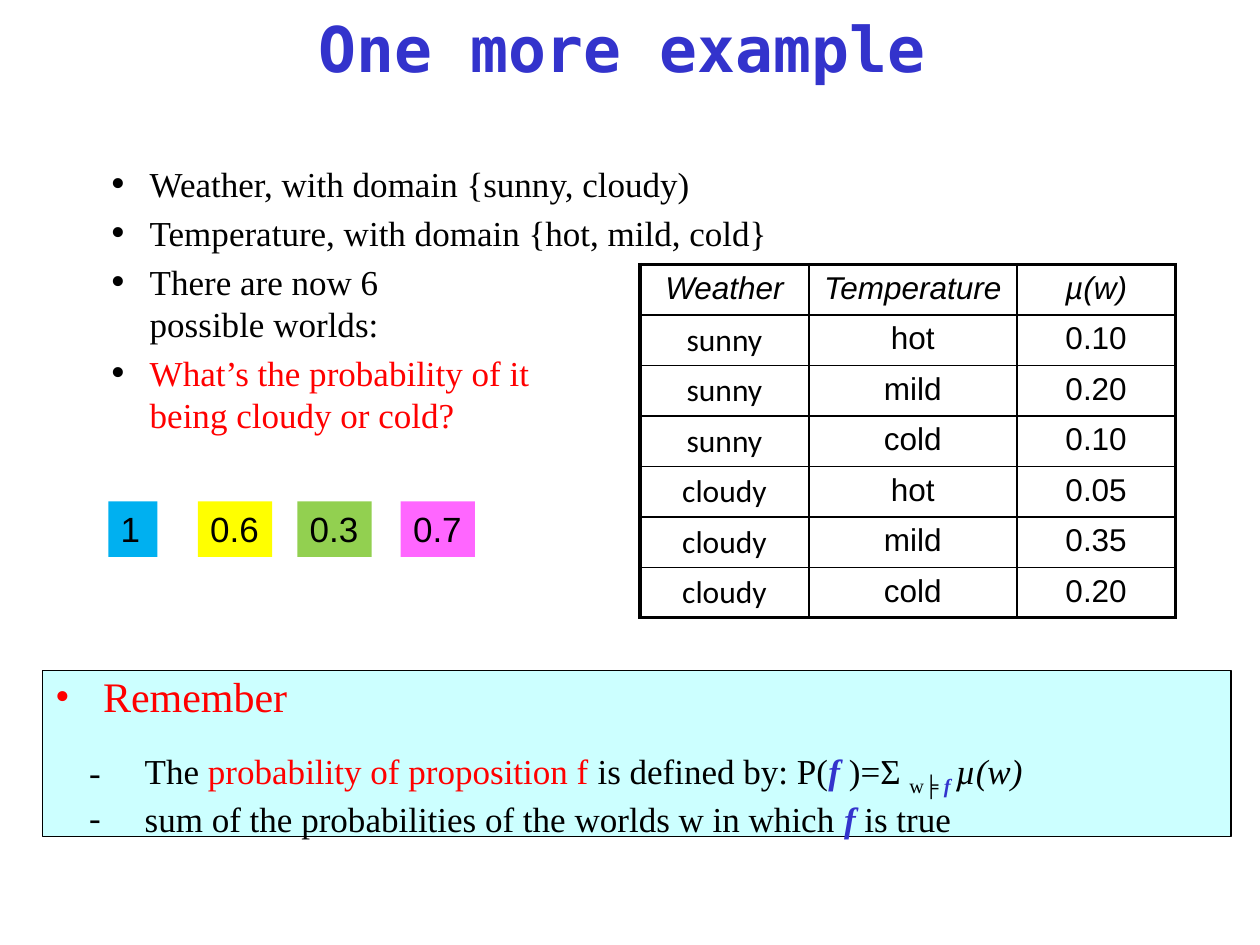
import pptx
import pptx.util
import pptx.dml.color
import pptx.enum.shapes
import pptx.enum.text
import pptx.oxml.ns
from lxml import etree

Inches, Pt = pptx.util.Inches, pptx.util.Pt
ALIGN, ANCHOR = pptx.enum.text.PP_ALIGN, pptx.enum.text.MSO_ANCHOR
qn = pptx.oxml.ns.qn

COLORS = {"black": "000000", "white": "FFFFFF", "red": "FF0000", "blue": "3333CC",
          "sky": "00B0F0", "yellow": "FFFF00", "green": "92D050", "pink": "FF66FF",
          "pale": "CCFFFF"}
SERIF = "Times New Roman"


def rgb(name):
    return pptx.dml.color.RGBColor.from_string(COLORS[name])


def add_text(p, text, font=SERIF, size=20, color="black", bold=False, italic=False,
             subscript=False):
    """Append formatted text to a paragraph; a newline becomes a line break."""
    for i, line in enumerate(text.split("\n")):
        if i:
            p.add_line_break()
        r = p.add_run()
        r.text = line
        r.font.name, r.font.size = font, Pt(size)
        r.font.bold, r.font.italic = bold, italic
        r.font.color.rgb = rgb(color)
        if subscript:
            r.font._element.set("baseline", "-25000")


def set_bullet(p, char, margin, hang, color, percent=100):
    pPr = p._p.get_or_add_pPr()
    pPr.set("marL", str(Inches(margin)))
    pPr.set("indent", str(-Inches(hang)))
    clr = etree.SubElement(pPr, qn("a:buClr"))
    etree.SubElement(clr, qn("a:srgbClr"), val=COLORS[color])
    etree.SubElement(pPr, qn("a:buSzPct"), val=str(percent * 1000))
    etree.SubElement(pPr, qn("a:buFont"), typeface=SERIF)
    etree.SubElement(pPr, qn("a:buChar"), char=char)


def add_title(s, x, y, w, h):
    sp = s.shapes.title
    sp.left, sp.top, sp.width, sp.height = map(Inches, (x, y, w, h))
    tf = sp.text_frame
    tf.vertical_anchor = ANCHOR.MIDDLE
    p = tf.paragraphs[0]
    p.alignment = ALIGN.CENTER
    add_text(p, "One more example", font="DejaVu Sans Mono", size=36, color="blue", bold=True)


def add_bullets(s, x, y, w, h):
    tf = s.shapes.add_textbox(*map(Inches, (x, y, w, h))).text_frame
    tf.word_wrap = True
    tf.margin_top = Inches(0.53)
    items = [("Weather, with domain {sunny, cloudy)", "black"),
             ("Temperature, with domain {hot, mild, cold}", "black"),
             ("There are now 6\npossible worlds:", "black"),
             ("What’s the probability of it\nbeing cloudy or cold?", "red")]
    for i, (text, color) in enumerate(items):
        p = tf.add_paragraph() if i else tf.paragraphs[0]
        p.space_before = Pt(4 if i else 0)
        set_bullet(p, "•", 0.81, 0.31, "black", 120)
        add_text(p, text, color=color)


def add_rect(s, x, y, w, h, fill, line=None):
    sp = s.shapes.add_shape(pptx.enum.shapes.MSO_SHAPE.RECTANGLE, *map(Inches, (x, y, w, h)))
    sp.shadow.inherit = False
    sp.fill.solid()
    sp.fill.fore_color.rgb = rgb(fill)
    if line:
        sp.line.color.rgb = rgb(line)
        sp.line.width = Pt(0.75)
    else:
        sp.line.fill.background()
    tf = sp.text_frame
    tf.vertical_anchor = ANCHOR.TOP
    tf.paragraphs[0].alignment = ALIGN.LEFT
    return tf


def add_answers(s, x, y, h):
    """Place the candidate answers in a row."""
    for text, dx, w, fill in [("1", 0, 0.39, "sky"), ("0.6", 0.71, 0.59, "yellow"),
                              ("0.3", 1.5, 0.59, "green"), ("0.7", 2.32, 0.59, "pink")]:
        tf = add_rect(s, x + dx, y, w, h, fill)
        tf.word_wrap = False
        add_text(tf.paragraphs[0], text, font="Arial")


def set_border(cell, side, width):
    ln = etree.SubElement(cell._tc.get_or_add_tcPr(), qn("a:ln" + side), w=str(Pt(width)))
    fill = etree.SubElement(ln, qn("a:solidFill"))
    etree.SubElement(fill, qn("a:srgbClr"), val=COLORS["black"])


def add_worlds_table(s, x, y, widths, row_h):
    rows = [("Weather", "Temperature", "µ(w)"),
            ("sunny", "hot", "0.10"), ("sunny", "mild", "0.20"), ("sunny", "cold", "0.10"),
            ("cloudy", "hot", "0.05"), ("cloudy", "mild", "0.35"), ("cloudy", "cold", "0.20")]
    n_rows, n_cols = len(rows), len(widths)
    table = s.shapes.add_table(n_rows, n_cols, Inches(x), Inches(y),
                               Inches(sum(widths)), Inches(row_h * n_rows)).table
    table.first_row = table.horz_banding = False
    for col, w in zip(table.columns, widths):
        col.width = Inches(w)
    for i, row in enumerate(rows):
        for j, text in enumerate(row):
            cell = table.cell(i, j)
            outer = {"L": j == 0, "R": j == n_cols - 1, "T": i == 0, "B": i == n_rows - 1}
            for side, is_outer in outer.items():
                set_border(cell, side, 2.25 if is_outer else 1)
            cell.fill.solid()
            cell.fill.fore_color.rgb = rgb("white")
            p = cell.text_frame.paragraphs[0]
            p.alignment = ALIGN.CENTER
            add_text(p, text, font="Calibri" if i and j == 0 else "Arial", size=18,
                     italic=i == 0)


def add_reminder(s, x, y, w, h):
    tf = add_rect(s, x, y, w, h, "pale", line="black")
    tf.word_wrap = True
    p = tf.paragraphs[0]
    p.line_spacing = 0.9
    set_bullet(p, "•", 0.38, 0.38, "red")
    add_text(p, "Remember", size=24, color="red")

    symbol = {"color": "blue", "bold": True, "italic": True}
    definition = [("The ", {}), ("probability of proposition f ", {"color": "red"}),
                  ("is defined by: P(", {}), ("f ", symbol), (")=Σ ", {}),
                  ("w", {"subscript": True}), ("╞ ", {"subscript": True, "italic": True}),
                  ("f ", {**symbol, "subscript": True}), ("µ(w)", {"italic": True})]
    meaning = [("sum of the probabilities of the worlds w in which ", {}), ("f", symbol),
               (" is true", {})]
    for runs, gap in [(definition, 16), (meaning, 0)]:
        p = tf.add_paragraph()
        p.alignment = ALIGN.LEFT
        p.space_before = Pt(gap)
        set_bullet(p, "-", 0.71, 0.44, "black")
        for text, style in runs:
            add_text(p, text, **style)


def main():
    prs = pptx.Presentation()
    prs.slide_width, prs.slide_height = Inches(10), Inches(7.5)
    s = prs.slides.add_slide(prs.slide_layouts[5])
    add_title(s, 0.27, 0, 9.33, 0.75)
    add_bullets(s, 0.28, 0.76, 8.52, 1.64)
    add_answers(s, 0.86, 3.98, 0.44)
    add_worlds_table(s, 5.08, 2.1, [1.34, 1.65, 1.26], 0.4)
    add_reminder(s, 0.34, 5.32, 9.43, 1.32)
    prs.save("out.pptx")


if __name__ == "__main__":
    main()
